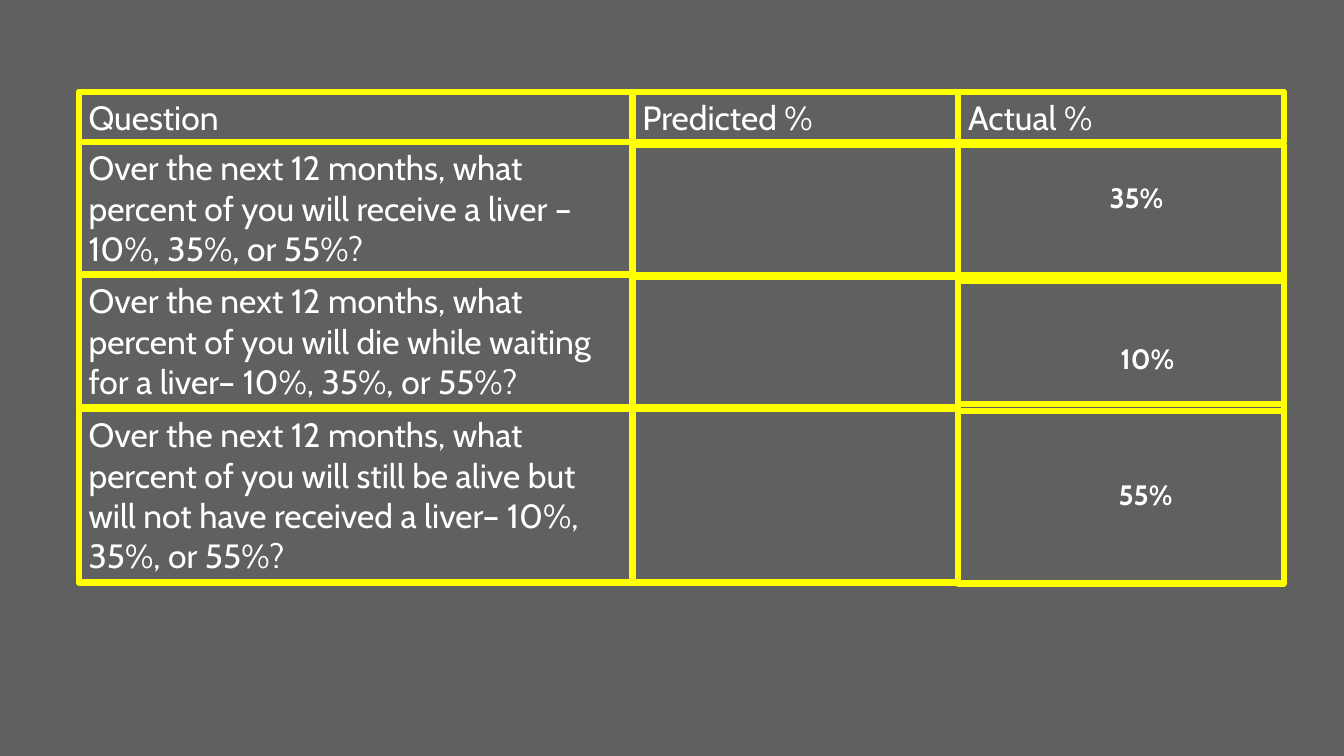
"""Build a slide that compares predicted and actual liver waiting-list outcomes."""
from pptx import Presentation
from pptx.dml.color import RGBColor
from pptx.enum.shapes import MSO_SHAPE as Shape
from pptx.enum.text import MSO_ANCHOR as Anchor, PP_ALIGN as Align
from pptx.util import Pt

GREY = RGBColor(0x60, 0x60, 0x60)
YELLOW = RGBColor(0xFF, 0xFF, 0x00)
WHITE = RGBColor(0xFF, 0xFF, 0xFF)

HEADERS = ["Question", "Predicted %", "Actual %"]
QUESTIONS = [
    "Over the next 12 months, what percent of you will receive a liver – 10%, 35%, or 55%?",
    "Over the next 12 months, what percent of you will die while waiting for a liver– 10%, 35%, or 55%?",
    "Over the next 12 months, what percent of you will still be alive but "
    "will not have received a liver– 10%, 35%, or 55%?",
]
ANSWERS = [
    {"text": "35%", "inset_left": 108.2, "inset_top": 25.5},
    {"text": "10%", "inset_left": 116, "inset_top": 47.4},
    {"text": "55%", "inset_left": 114.7, "inset_top": 52.2},
]

LEFT = 56.2
WIDTHS = [395.6, 232.6, 232.6]
LEFTS = [LEFT + sum(WIDTHS[:column]) for column in range(len(WIDTHS))]
HEADER_TOP, HEADER_HEIGHT = 65.5, 36
QUESTION_ROWS = [(101.5, 94.3), (196.6, 94.3), (292.3, 123.8)]
PREDICTED_ROWS = [(103.7, 94.3), (196.6, 94.3), (292.3, 123.8)]
ACTUAL_ROWS = [(103.7, 97.2), (196.6, 97.2), (288.7, 128.2)]


def write(shape, text, size=24, bold=False, inset_left=7.2, inset_top=3.6):
    """Put left-aligned white text at the top of a box."""
    frame = shape.text_frame
    frame.word_wrap = True
    frame.vertical_anchor = Anchor.TOP
    frame.margin_left, frame.margin_top = Pt(inset_left), Pt(inset_top)
    paragraph = frame.paragraphs[0]
    paragraph.alignment = Align.LEFT
    run = paragraph.add_run()
    run.text = text
    run.font.name = "Cabin"
    run.font.size = Pt(size)
    run.font.bold = bold
    run.font.color.rgb = WHITE


def add_box(slide, column, top, height):
    """Add a yellow-outlined box in a column."""
    shape = slide.shapes.add_shape(
        Shape.RECTANGLE, Pt(LEFTS[column]), Pt(top), Pt(WIDTHS[column]), Pt(height))
    shape.shadow.inherit = False
    shape.fill.background()
    shape.line.color.rgb = YELLOW
    shape.line.width = Pt(4.5)
    return shape


def main():
    """Create and save the presentation."""
    presentation = Presentation()
    presentation.slide_width, presentation.slide_height = Pt(960), Pt(540)
    slide = presentation.slides.add_slide(presentation.slide_layouts[6])
    slide.background.fill.solid()
    slide.background.fill.fore_color.rgb = GREY

    for column, header in enumerate(HEADERS):
        write(add_box(slide, column, HEADER_TOP, HEADER_HEIGHT), header)
    for question, row in zip(QUESTIONS, QUESTION_ROWS):
        write(add_box(slide, 0, *row), question)
    for row in PREDICTED_ROWS:
        add_box(slide, 1, *row)
    for answer, row in zip(ANSWERS, ACTUAL_ROWS):
        write(add_box(slide, 2, *row), size=20, bold=True, **answer)

    presentation.save("out.pptx")


if __name__ == "__main__":
    main()
